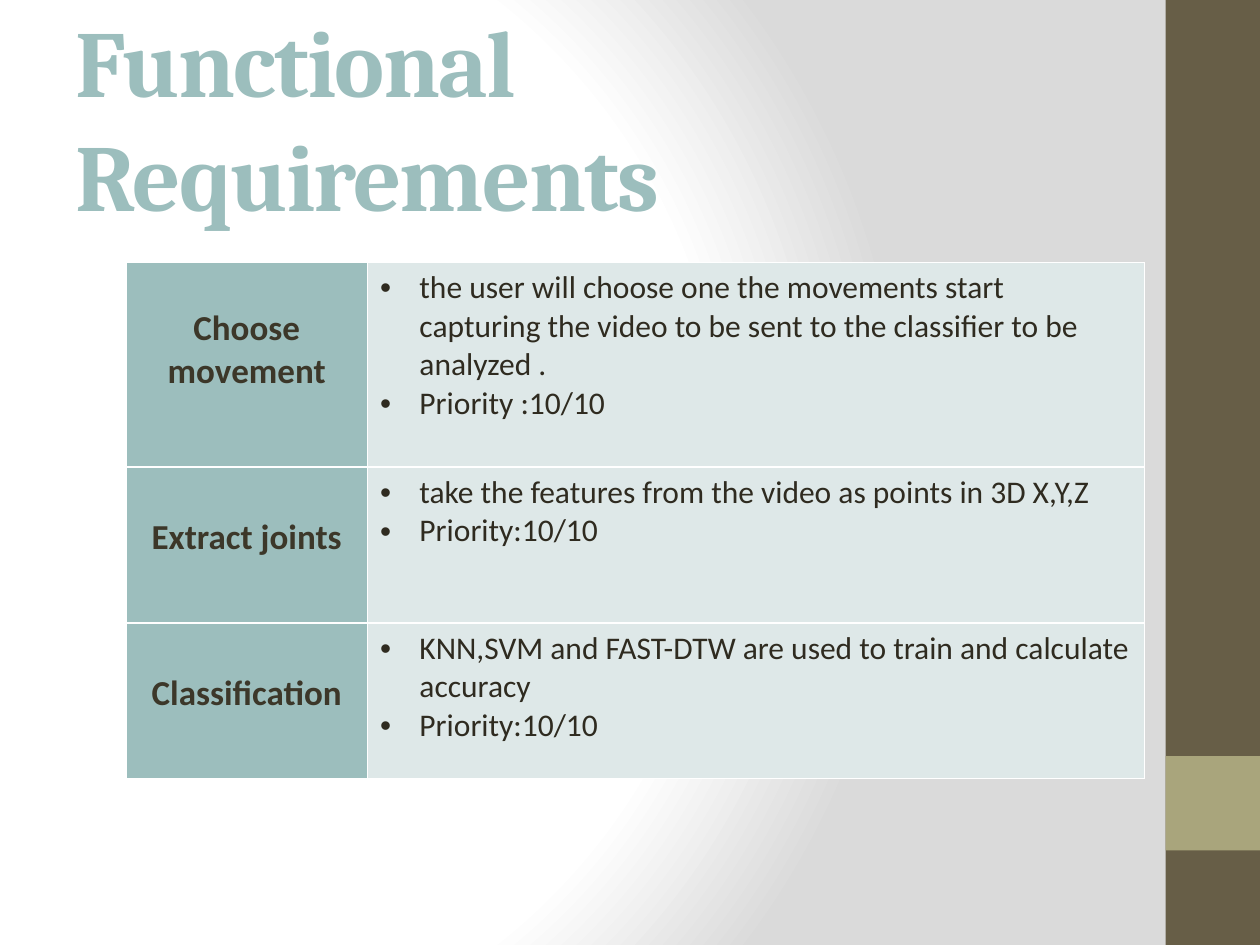
from pptx import Presentation
from pptx.dml.color import RGBColor as RGB
from pptx.enum.shapes import MSO_SHAPE as Kind
from pptx.enum.text import MSO_ANCHOR as Anchor, PP_ALIGN as Align
from pptx.oxml import parse_xml
from pptx.oxml.ns import nsdecls, qn
from pptx.util import Pt

HUES = {
    "bar": "675E47", "block": "A9A57C", "teal": "9CBEBD", "pale": "DEE8E8",
    "head": "3C3729", "ink": "2F2B20", "white": "FFFFFF", "grey": "DADADA",
}
NS = nsdecls("a")


def write(para, text, font="Calibri", size=18, hue="ink", bold=False,
          align=Align.LEFT, track=0, bullet=False):
    """Fill one paragraph with formatted text."""
    para.alignment = align
    run = para.add_run()
    run.text = text
    run.font.name, run.font.size, run.font.bold = font, Pt(size), bold
    run.font.color.rgb = RGB.from_string(HUES[hue])
    if track:
        run.font._element.set("spc", str(track * 100))
    if bullet:
        props = para._p.get_or_add_pPr()
        props.set("marL", str(Pt(22.5)))
        props.set("indent", str(Pt(-22.5)))
        props.append(parse_xml(f'<a:buFont {NS} typeface="Arial"/>'))
        props.append(parse_xml(f'<a:buChar {NS} char="•"/>'))


class Deck:
    """Holds the style and the current slide."""

    def __init__(self, wide, high):
        self.prs = Presentation()
        self.prs.slide_width, self.prs.slide_height = Pt(wide), Pt(high)
        self.slide = self.prs.slides.add_slide(self.prs.slide_layouts[6])

    def glow(self, stops):
        self.slide.background.fill.gradient()
        old = self.slide.element.find(".//" + qn("a:gradFill"))
        marks = "".join(
            f'<a:gs pos="{pos * 1000}"><a:srgbClr val="{HUES[hue]}"/></a:gs>'
            for pos, hue in stops)
        old.getparent().replace(old, parse_xml(
            f'<a:gradFill {NS} rotWithShape="1"><a:gsLst>{marks}</a:gsLst>'
            '<a:path path="circle"><a:fillToRect l="20000" t="50000" '
            'r="100000" b="50000"/></a:path></a:gradFill>'))

    def rect(self, left, top, wide, high, hue):
        box = self.slide.shapes.add_shape(
            Kind.RECTANGLE, Pt(left), Pt(top), Pt(wide), Pt(high))
        box.shadow.inherit = False
        box.fill.solid()
        box.fill.fore_color.rgb = RGB.from_string(HUES[hue])
        box.line.fill.background()

    def text(self, left, top, wide, high, words, **form):
        box = self.slide.shapes.add_textbox(
            Pt(left), Pt(top), Pt(wide), Pt(high))
        frame = box.text_frame
        frame.word_wrap = True
        frame.vertical_anchor = Anchor.MIDDLE
        write(frame.paragraphs[0], words, **form)

    def cell(self, cell, lines, fill, **form):
        cell.fill.solid()
        cell.fill.fore_color.rgb = RGB.from_string(HUES[fill])
        props = cell._tc.get_or_add_tcPr()
        for spot, side in enumerate("LRTB"):
            props.insert(spot, parse_xml(
                f'<a:ln{side} {NS} w="{Pt(1)}"><a:solidFill><a:srgbClr '
                f'val="{HUES["white"]}"/></a:solidFill></a:ln{side}>'))
        frame = cell.text_frame
        for num, line in enumerate(lines):
            para = frame.add_paragraph() if num else frame.paragraphs[0]
            write(para, line, **form)

    def table(self, left, top, cols, highs, rows, drops):
        grid = self.slide.shapes.add_table(
            len(rows), len(cols), Pt(left), Pt(top),
            Pt(sum(cols)), Pt(sum(highs))).table
        for col, wide in zip(grid.columns, cols):
            col.width = Pt(wide)
        for num, (name, notes) in enumerate(rows):
            grid.rows[num].height = Pt(highs[num])
            head, body = grid.rows[num].cells
            head.margin_top = Pt(drops[num])
            self.cell(head, [name], "teal", size=20, hue="head",
                      bold=True, align=Align.CENTER)
            self.cell(body, notes, "pale", bullet=True)


def main():
    deck = Deck(720, 540)

    # Background and side bar
    deck.glow([(0, "white"), (75, "white"), (100, "grey")])
    deck.rect(666, 0, 54, 540, "bar")
    deck.rect(666, 432, 54, 54, "block")

    # Title
    deck.text(36, 21.6, 600, 90, "Functional Requirements", font="Cambria",
              size=54, hue="teal", bold=True, track=-1)

    # Requirements
    rows = [
        ("Choose movement", [
            "the user will choose one the movements start capturing the "
            "video to be sent to the classifier to be analyzed .",
            "Priority :10/10"]),
        ("Extract joints", [
            "take the features from the video as points in 3D X,Y,Z",
            "Priority:10/10"]),
        ("Classification", [
            "KNN,SVM and FAST-DTW are used to train and calculate accuracy",
            "Priority:10/10"]),
    ]
    deck.table(72, 150, [138, 444], [117, 89, 89], rows, [25.5, 28, 28])

    deck.prs.save("out.pptx")


if __name__ == "__main__":
    main()
